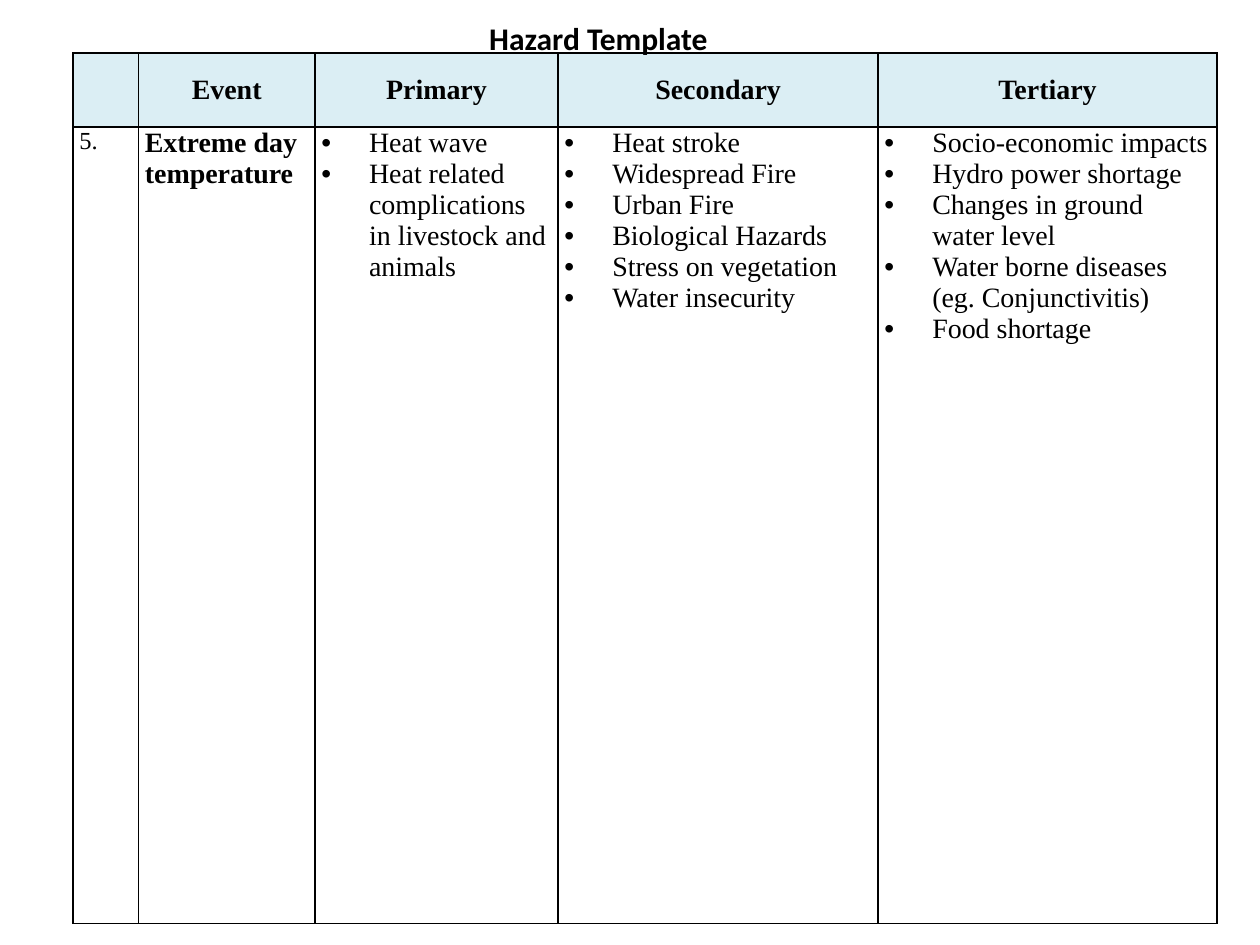
from lxml import etree
from pptx import Presentation
from pptx.dml.color import RGBColor
from pptx.enum import text
from pptx.oxml import ns
from pptx.util import Inches, Pt

COLORS = {"ink": "000000", "header": "DBEEF4"}
BODY_FONT = "Times New Roman"
COLUMN_WIDTHS = [0.52, 1.4, 1.93, 2.54, 2.69]
ROW_HEIGHTS = [0.59, 6.32]
HEADERS = ["", "Event", "Primary", "Secondary", "Tertiary"]
IMPACTS = [
    ["Heat wave", "Heat related complications in livestock and animals"],
    ["Heat stroke", "Widespread Fire", "Urban Fire", "Biological Hazards",
     "Stress on vegetation", "Water insecurity"],
    ["Socio-economic impacts", "Hydro power shortage",
     "Changes in ground water level",
     "Water borne diseases (eg. Conjunctivitis)", "Food shortage"],
]


def format_paragraph(paragraph, size, bold, name=BODY_FONT,
                     align=text.PP_ALIGN.LEFT):
    paragraph.alignment = align
    font = paragraph.font
    font.name, font.size, font.bold = name, Pt(size), bold
    font.color.rgb = RGBColor.from_string(COLORS["ink"])


def add_bullet(paragraph):
    properties = paragraph._p.get_or_add_pPr()
    indent = Inches(0.38)
    properties.set("marL", str(indent))
    properties.set("indent", str(-indent))
    font = etree.Element(ns.qn("a:buFont"), typeface="Arial")
    bullet = etree.Element(ns.qn("a:buChar"), char="•")
    properties.insert(0, font)
    properties.insert(1, bullet)


def add_borders(cell):
    properties = cell._tc.get_or_add_tcPr()
    for side in ("lnL", "lnR", "lnT", "lnB"):
        line = etree.SubElement(properties, ns.qn(f"a:{side}"), w=str(Pt(1)))
        fill = etree.SubElement(line, ns.qn("a:solidFill"))
        etree.SubElement(fill, ns.qn("a:srgbClr"), val=COLORS["ink"])


def fill_cell(cell, lines, size=16, bold=False, header=False, bulleted=False):
    add_borders(cell)
    cell.margin_left = cell.margin_right = Inches(0.05)
    cell.margin_top = cell.margin_bottom = 0
    if header:
        cell.fill.solid()
        cell.fill.fore_color.rgb = RGBColor.from_string(COLORS["header"])
        cell.vertical_anchor = text.MSO_ANCHOR.MIDDLE
    else:
        cell.fill.background()
    align = text.PP_ALIGN.CENTER if header else text.PP_ALIGN.LEFT
    cell.text = "\n".join(lines)
    for paragraph in cell.text_frame.paragraphs:
        format_paragraph(paragraph, size, bold, align=align)
        if bulleted:
            add_bullet(paragraph)


def add_hazard_table(slide):
    frame = slide.shapes.add_table(
        len(ROW_HEIGHTS), len(COLUMN_WIDTHS), Inches(0.58), Inches(0.42),
        Inches(sum(COLUMN_WIDTHS)), Inches(sum(ROW_HEIGHTS)))
    table = frame.table
    table.first_row = table.horz_banding = False
    for column, width in zip(table.columns, COLUMN_WIDTHS):
        column.width = Inches(width)
    for row, height in zip(table.rows, ROW_HEIGHTS):
        row.height = Inches(height)
    for index, label in enumerate(HEADERS):
        fill_cell(table.cell(0, index), [label], bold=True, header=True)
    fill_cell(table.cell(1, 0), ["5."], size=14)
    fill_cell(table.cell(1, 1), ["Extreme day temperature"], bold=True)
    for index, impacts in enumerate(IMPACTS, start=2):
        fill_cell(table.cell(1, index), impacts, bulleted=True)


def set_title(slide, wording):
    """Place the title in front of the table, whose top edge it touches."""
    title = slide.shapes.title
    title.left, title.top = Inches(2.75), Inches(0.1)
    title.width, title.height = Inches(4), Inches(0.4)
    frame = title.text_frame
    frame.text = wording
    frame.auto_size = text.MSO_AUTO_SIZE.NONE
    frame.vertical_anchor = text.MSO_ANCHOR.TOP
    format_paragraph(frame.paragraphs[0], 18, True, "Calibri",
                     text.PP_ALIGN.CENTER)
    title.element.getparent().append(title.element)


def main():
    presentation = Presentation()
    presentation.slide_width = Inches(10)
    presentation.slide_height = Inches(7.5)
    slide = presentation.slides.add_slide(presentation.slide_layouts[5])
    add_hazard_table(slide)
    set_title(slide, "Hazard Template")
    presentation.save("out.pptx")


if __name__ == "__main__":
    main()
